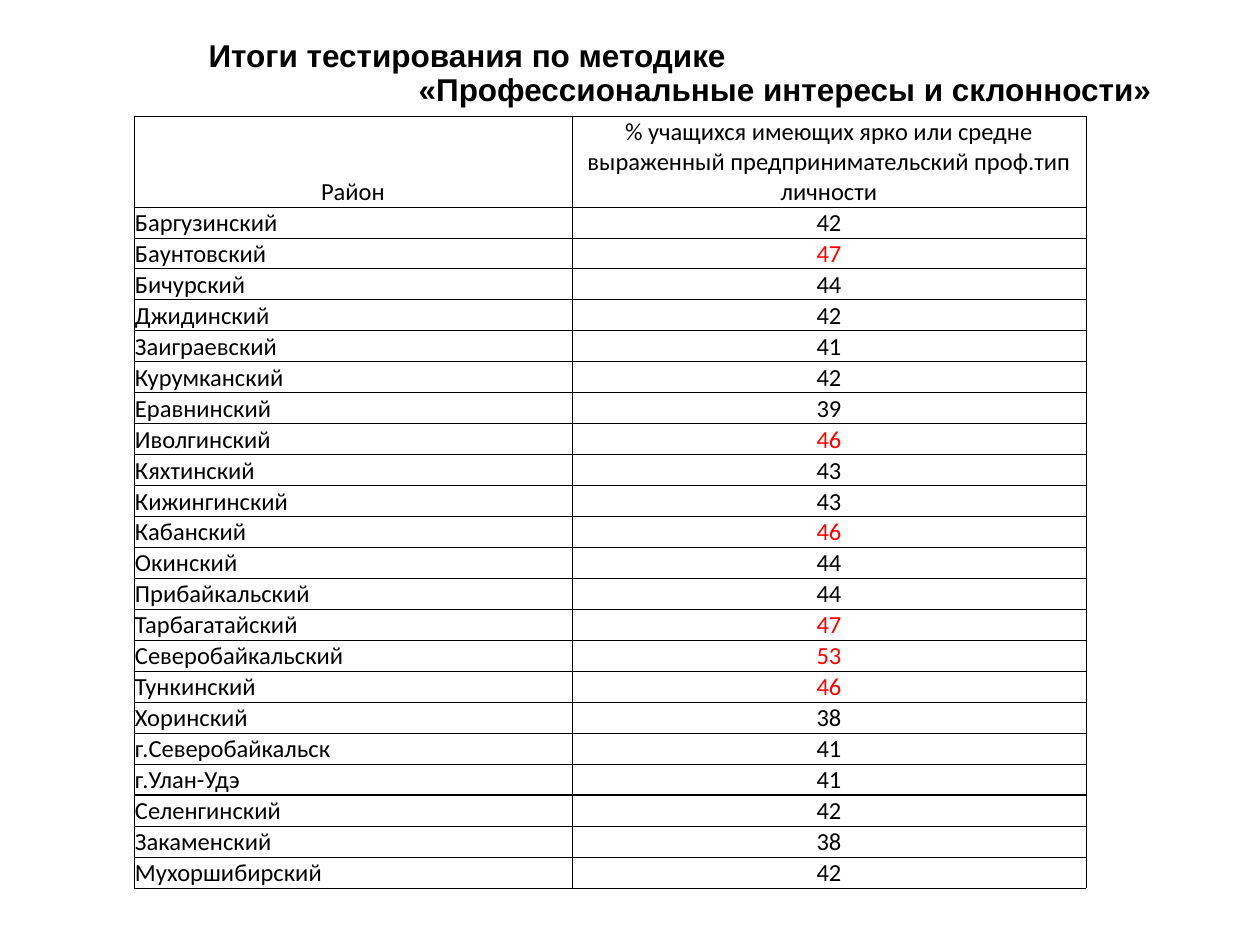
from dataclasses import dataclass

from lxml import etree
from pptx import Presentation
from pptx.dml.color import RGBColor
from pptx.enum.text import MSO_ANCHOR, MSO_AUTO_SIZE, PP_ALIGN
from pptx.oxml.ns import qn
from pptx.util import Pt

LEFT, CENTER = PP_ALIGN.LEFT, PP_ALIGN.CENTER
MIDDLE, BOTTOM = MSO_ANCHOR.MIDDLE, MSO_ANCHOR.BOTTOM
NO_FIT = MSO_AUTO_SIZE.NONE
TITLE_ONLY = 5
EMU_PER_PX = 914400 / 126

TITLE_LINES = [
    ("Итоги тестирования по методике", 122),
    ("«Профессиональные интересы и склонности»", 332),
]
HEADERS = [
    "Район",
    "% учащихся имеющих ярко или средне выраженный предпринимательский проф.тип личности",
]
DISTRICTS = [
    ("Баргузинский", 42),
    ("Баунтовский", 47),
    ("Бичурский", 44),
    ("Джидинский", 42),
    ("Заиграевский", 41),
    ("Курумканский", 42),
    ("Еравнинский", 39),
    ("Иволгинский", 46),
    ("Кяхтинский", 43),
    ("Кижингинский", 43),
    ("Кабанский", 46),
    ("Окинский", 44),
    ("Прибайкальский", 44),
    ("Тарбагатайский", 47),
    ("Северобайкальский", 53),
    ("Тункинский", 46),
    ("Хоринский", 38),
    ("г.Северобайкальск", 41),
    ("г.Улан-Удэ", 41),
    ("Селенгинский", 42),
    ("Закаменский", 38),
    ("Мухоршибирский", 42),
]
HIGH_SCORE = 46
THICK_RULE_BELOW = "г.Улан-Удэ"


@dataclass(frozen=True)
class Theme:
    text: str = "000000"
    highlight: str = "FF0000"
    border: str = "000000"
    title_font: str = "Arial"
    table_font: str = "Calibri"
    title_size: int = 18
    table_size: int = 14
    thin: float = 0.5
    thick: float = 1


def px(length):
    return round(length * EMU_PER_PX)


class SlideBuilder:
    def __init__(self, slide, theme):
        self.slide = slide
        self.theme = theme

    def style(self, paragraph, font_name, size, color, align, bold=False):
        paragraph.alignment = align
        font = paragraph.font
        font.name, font.size, font.bold = font_name, Pt(size), bold
        font.color.rgb = RGBColor.from_string(color)

    def title(self, lines, left, top, width, height):
        box = self.slide.shapes.title
        box.left, box.top, box.width, box.height = map(px, (left, top, width, height))
        frame = box.text_frame
        frame.text = "\n".join(text for text, indent in lines)
        frame.word_wrap = True
        frame.auto_size = NO_FIT
        frame.vertical_anchor = MIDDLE
        for paragraph, (text, indent) in zip(frame.paragraphs, lines):
            self.style(paragraph, self.theme.title_font, self.theme.title_size,
                       self.theme.text, LEFT, bold=True)
            paragraph.line_spacing = 0.9
            properties = paragraph._p.get_or_add_pPr()
            properties.set("marL", str(px(indent)))
            properties.set("indent", "0")

    def borders(self, cell, top, bottom):
        properties = cell._tc.get_or_add_tcPr()
        thin = self.theme.thin
        for side, width in (("L", thin), ("R", thin), ("T", top), ("B", bottom)):
            line = etree.SubElement(properties, qn(f"a:ln{side}"), w=str(Pt(width)))
            fill = etree.SubElement(line, qn("a:solidFill"))
            etree.SubElement(fill, qn("a:srgbClr"), val=self.theme.border)

    def cell(self, cell, text, align, color, top, bottom):
        cell.text = text
        cell.vertical_anchor = BOTTOM
        cell.margin_left = cell.margin_right = cell.margin_top = px(1)
        cell.margin_bottom = 0
        self.style(cell.text_frame.paragraphs[0], self.theme.table_font,
                   self.theme.table_size, color, align)
        self.borders(cell, top, bottom)
        cell.fill.background()

    def table(self, headers, records, left, top, widths, header_height, row_height):
        heights = [header_height] + [row_height] * len(records)
        table = self.slide.shapes.add_table(
            len(heights), len(widths), px(left), px(top),
            px(sum(widths)), px(sum(heights))).table
        table.first_row = table.horz_banding = False
        for column, width in zip(table.columns, widths):
            column.width = px(width)
        for row, height in zip(table.rows, heights):
            row.height = px(height)
        for column, header in enumerate(headers):
            self.cell(table.cell(0, column), header, CENTER, self.theme.text,
                      self.theme.thin, self.theme.thin)
        above = self.theme.thin
        for row, (district, score) in enumerate(records, start=1):
            below = self.theme.thick if district == THICK_RULE_BELOW else self.theme.thin
            color = self.theme.highlight if score >= HIGH_SCORE else self.theme.text
            self.cell(table.cell(row, 0), district, LEFT, self.theme.text, above, below)
            self.cell(table.cell(row, 1), str(score), CENTER, color, above, below)
            above = below


def main():
    deck = Presentation()
    deck.slide_width, deck.slide_height = px(1260), px(945)
    slide = deck.slides.add_slide(deck.slide_layouts[TITLE_ONLY])
    builder = SlideBuilder(slide, Theme())
    builder.title(TITLE_LINES, 74, 45, 1134, 59)
    builder.table(HEADERS, DISTRICTS, 134, 116, (438, 514), 91, 31)
    deck.save("out.pptx")


if __name__ == "__main__":
    main()
